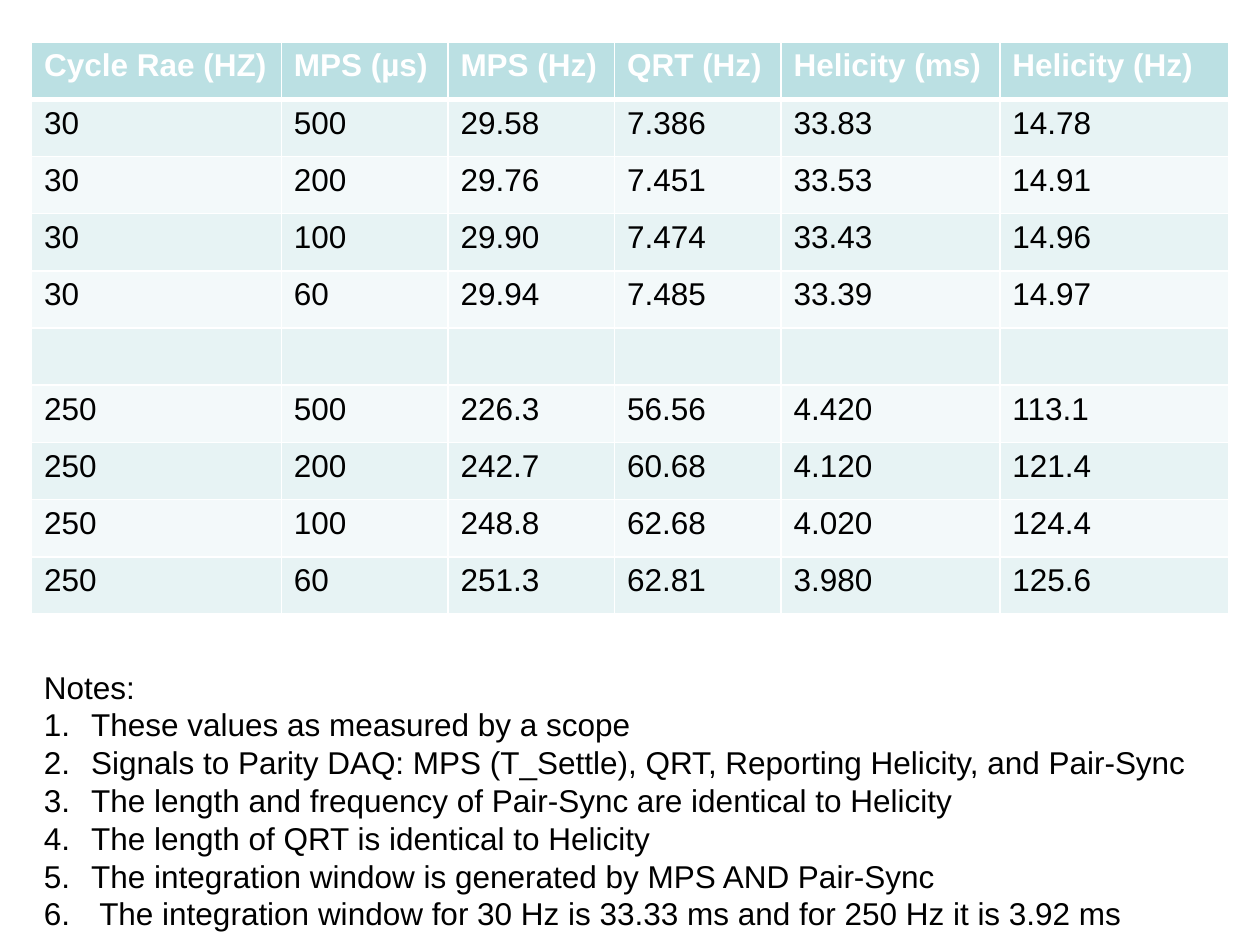
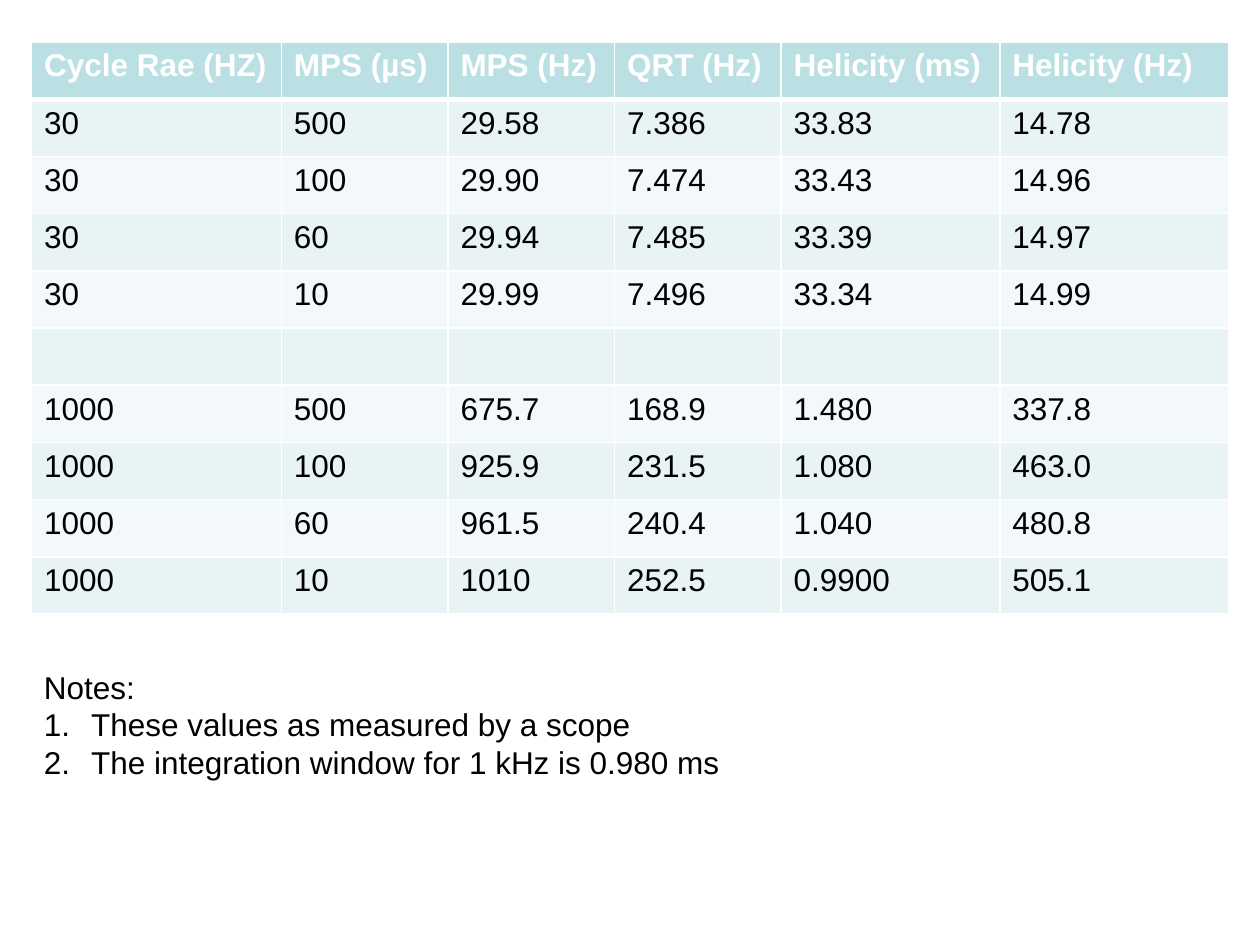
from dataclasses import dataclass

from lxml.etree import SubElement
from pptx import Presentation
from pptx.dml.color import RGBColor
from pptx.enum.text import MSO_AUTO_SIZE
from pptx.oxml.ns import qn
from pptx.slide import Slide
from pptx.table import _Cell
from pptx.text.text import _Paragraph
from pptx.util import Pt

COLORS = {
    "header": "BBE0E3",
    "odd_row": "E7F3F4",
    "even_row": "F3F9FA",
    "white": "FFFFFF",
    "text": "000000",
}
FONT = "Arial"
FONT_SIZE = Pt(18)
LEFT = Pt(18)
TABLE_TOP = Pt(24)
ROW_HEIGHT = Pt(32.7)
COLUMN_WIDTHS = [Pt(width) for width in (142.8, 95.2, 95.2, 95.2, 125, 130.6)]
NOTES_TOP = Pt(378)
NOTES_WIDTH = Pt(678)
NOTE_LINE_HEIGHT = Pt(21.6)
NOTES_PADDING = Pt(7.2)
NUMBER_INDENT = Pt(27)
THIN = Pt(1)
THICK = Pt(3)

HEADINGS = (
    "Cycle Rae (HZ)", "MPS (µs)", "MPS (Hz)",
    "QRT (Hz)", "Helicity (ms)", "Helicity (Hz)",
)


@dataclass(frozen=True)
class CycleGroup:
    rate: str
    readings: tuple[tuple[str, ...], ...]


@dataclass(frozen=True)
class TimingPage:
    groups: tuple[CycleGroup, ...]
    notes: tuple[str, ...]


PAGES = (
    TimingPage(
        groups=(
            CycleGroup("30", (
                ("500", "29.58", "7.386", "33.83", "14.78"),
                ("200", "29.76", "7.451", "33.53", "14.91"),
                ("100", "29.90", "7.474", "33.43", "14.96"),
                ("60", "29.94", "7.485", "33.39", "14.97"),
            )),
            CycleGroup("250", (
                ("500", "226.3", "56.56", "4.420", "113.1"),
                ("200", "242.7", "60.68", "4.120", "121.4"),
                ("100", "248.8", "62.68", "4.020", "124.4"),
                ("60", "251.3", "62.81", "3.980", "125.6"),
            )),
        ),
        notes=(
            "These values as measured by a scope",
            "Signals to Parity DAQ: MPS (T_Settle), QRT, Reporting Helicity, and Pair-Sync",
            "The length and frequency of Pair-Sync are identical to Helicity",
            "The length of QRT is identical to Helicity",
            "The integration window is generated by MPS AND Pair-Sync",
            " The integration window for 30 Hz is 33.33 ms and for 250 Hz it is 3.92 ms",
        ),
    ),
    TimingPage(
        groups=(
            CycleGroup("30", (
                ("500", "29.58", "7.386", "33.83", "14.78"),
                ("100", "29.90", "7.474", "33.43", "14.96"),
                ("60", "29.94", "7.485", "33.39", "14.97"),
                ("10", "29.99", "7.496", "33.34", "14.99"),
            )),
            CycleGroup("1000", (
                ("500", "675.7", "168.9", "1.480", "337.8"),
                ("100", "925.9", "231.5", "1.080", "463.0"),
                ("60", "961.5", "240.4", "1.040", "480.8"),
                ("10", "1010", "252.5", "0.9900", "505.1"),
            )),
        ),
        notes=(
            "These values as measured by a scope",
            "The integration window for 1 kHz is 0.980 ms",
        ),
    ),
)


def color(name: str) -> RGBColor:
    return RGBColor.from_string(COLORS[name])


def add_span(para: _Paragraph, text: str, color_name: str = "text", bold: bool = False) -> None:
    span = para.add_run()
    span.text = text
    span.font.name = FONT
    span.font.size = FONT_SIZE
    span.font.bold = bold
    span.font.color.rgb = color(color_name)


def add_borders(cell: _Cell, top: int, bottom: int) -> None:
    properties = cell._tc.get_or_add_tcPr()
    for side, width in (("L", THIN), ("R", THIN), ("T", top), ("B", bottom)):
        line = SubElement(properties, qn(f"a:ln{side}"), w=str(width))
        fill = SubElement(line, qn("a:solidFill"))
        SubElement(fill, qn("a:srgbClr"), val=COLORS["white"])


def table_rows(groups: tuple[CycleGroup, ...]) -> list[tuple[str, ...]]:
    rows = [HEADINGS]
    for index, group in enumerate(groups):
        if index:
            rows.append(("",) * len(HEADINGS))
        rows.extend((group.rate, *reading) for reading in group.readings)
    return rows


def add_timing_table(page: Slide, groups: tuple[CycleGroup, ...]) -> None:
    rows = table_rows(groups)
    table = page.shapes.add_table(
        len(rows), len(HEADINGS), LEFT, TABLE_TOP,
        sum(COLUMN_WIDTHS), ROW_HEIGHT * len(rows),
    ).table
    for column, width in zip(table.columns, COLUMN_WIDTHS):
        column.width = width
    for row_index, values in enumerate(rows):
        is_header = row_index == 0
        band = "header" if is_header else "odd_row" if row_index % 2 else "even_row"
        for column_index, value in enumerate(values):
            cell = table.cell(row_index, column_index)
            add_borders(
                cell,
                top=THICK if row_index == 1 else THIN,
                bottom=THICK if is_header else THIN,
            )
            cell.fill.solid()
            cell.fill.fore_color.rgb = color(band)
            if value:
                add_span(
                    cell.text_frame.paragraphs[0], value,
                    "white" if is_header else "text", is_header,
                )


def number_paragraph(para: _Paragraph) -> None:
    properties = para._p.get_or_add_pPr()
    properties.set("marL", str(NUMBER_INDENT))
    properties.set("indent", str(-NUMBER_INDENT))
    SubElement(properties, qn("a:buFont"), typeface=FONT)
    SubElement(properties, qn("a:buAutoNum"), type="arabicPeriod")


def add_notes_box(page: Slide, notes: tuple[str, ...]) -> None:
    height = NOTE_LINE_HEIGHT * (len(notes) + 1) + NOTES_PADDING
    box = page.shapes.add_textbox(LEFT, NOTES_TOP, NOTES_WIDTH, height)
    frame = box.text_frame
    frame.word_wrap = True
    frame.auto_size = MSO_AUTO_SIZE.SHAPE_TO_FIT_TEXT
    add_span(frame.paragraphs[0], "Notes:")
    for note in notes:
        para = frame.add_paragraph()
        number_paragraph(para)
        add_span(para, note)


def main() -> None:
    deck = Presentation()
    deck.slide_width = Pt(720)
    deck.slide_height = Pt(540)
    blank_layout = deck.slide_layouts[6]
    for content in PAGES:
        page = deck.slides.add_slide(blank_layout)
        add_timing_table(page, content.groups)
        add_notes_box(page, content.notes)
    deck.save("out.pptx")


if __name__ == "__main__":
    main()
